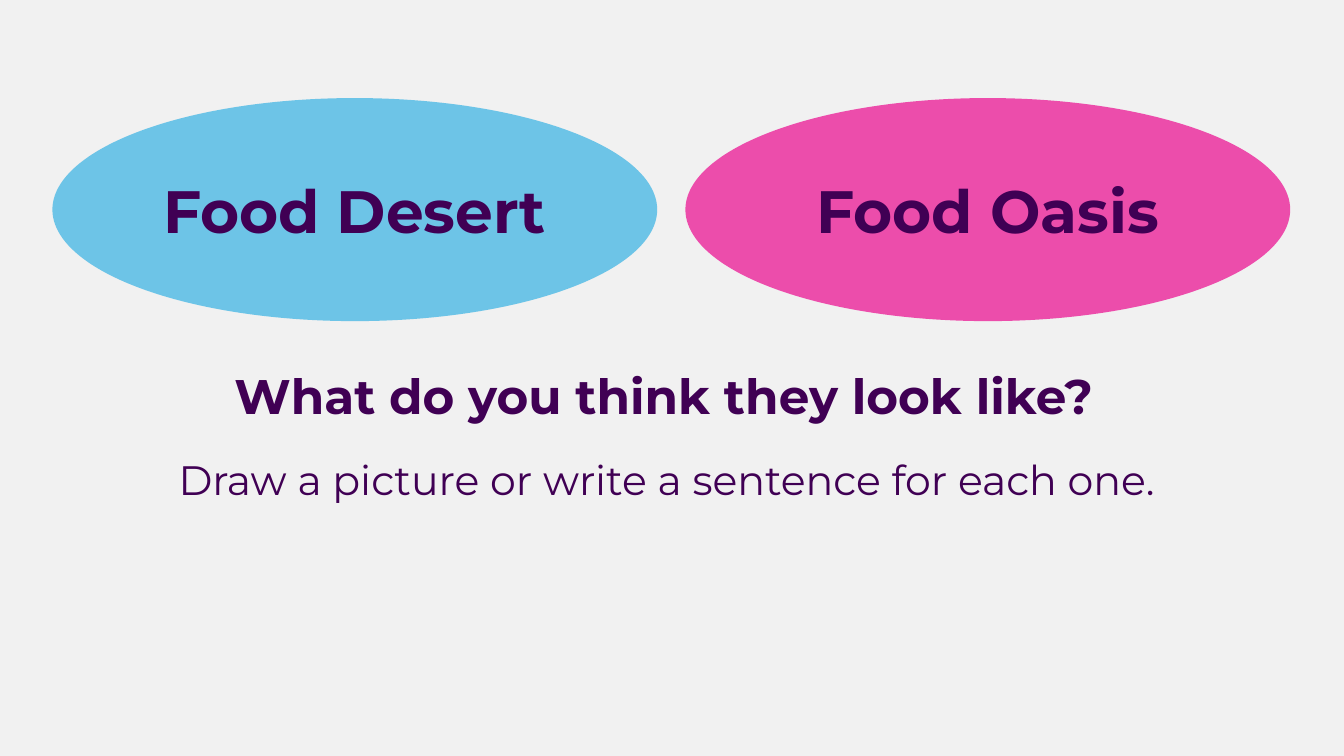
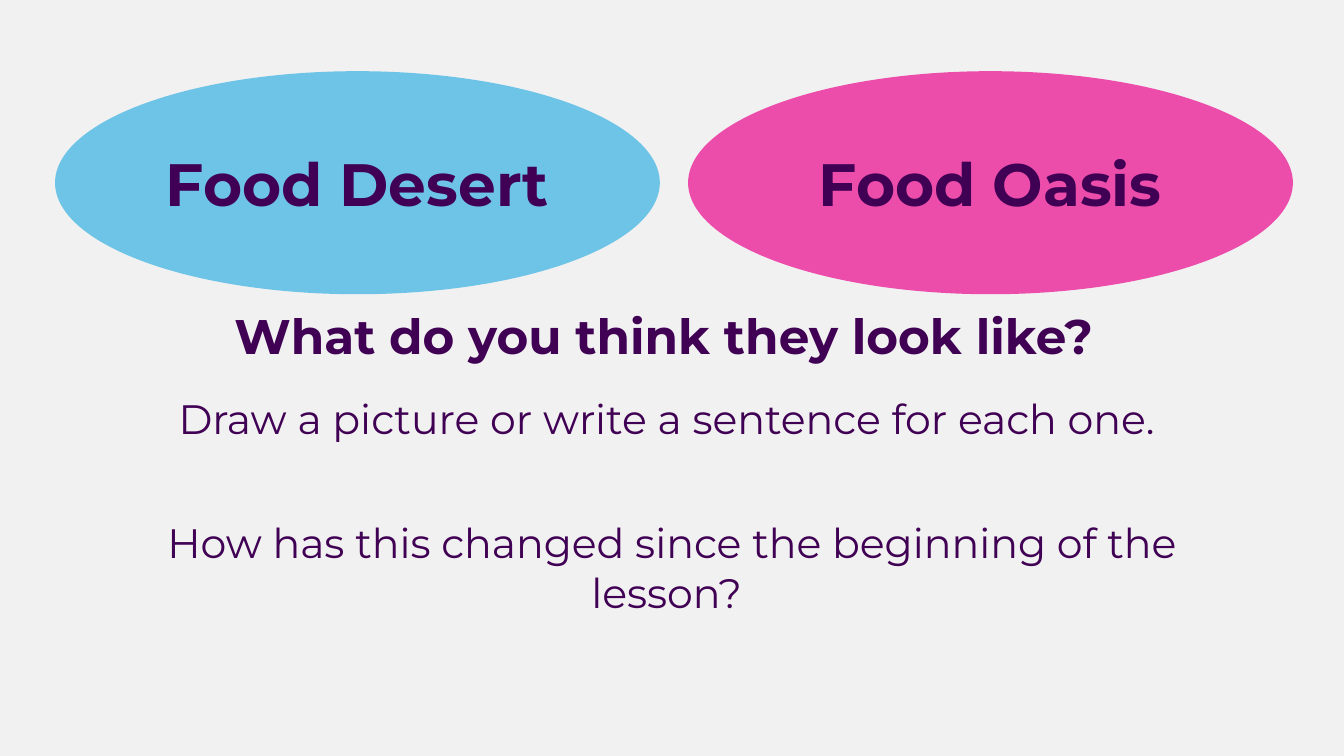
from dataclasses import dataclass

from lxml import etree
from pptx import Presentation
from pptx.dml.color import RGBColor
from pptx.enum import shapes, text
from pptx.oxml import ns
from pptx import util as u


@dataclass(frozen=True)
class Theme:
    """Colours, font and type sizes of the deck."""
    back: str = "F1F1F1"
    ink: str = "400054"
    blue: str = "2FAFE3"
    pink: str = "EB008B"
    alpha: int = 68
    font: str = "Montserrat"
    label: int = 32
    head: int = 26
    tail: int = 29
    body: int = 22
    plain: str = "{2D5ABB26-0587-4C30-8999-92F81FD0307C}"


class Deck:
    """Slides on a grid of 100 columns, with square cells."""

    def __init__(self, theme):
        """Start a wide deck."""
        self.theme = theme
        self.show = Presentation()
        self.show.slide_width = u.Inches(10)
        self.show.slide_height = u.Inches(10) * 9 // 16
        self.unit = self.show.slide_width // 100
        self.slide = None

    def grid(self, *cells):
        """Turn grid cells into lengths."""
        return [round(cell * self.unit) for cell in cells]

    def page(self):
        """Start a slide with the shared backdrop."""
        self.slide = self.show.slides.add_slide(self.show.slide_layouts[6])
        self.paint(self.slide.background.fill, self.theme.back)

    def paint(self, fill, tint):
        """Set a solid fill."""
        fill.solid()
        fill.fore_color.rgb = RGBColor.from_string(tint)

    def pad(self, item, anchor):
        """Set equal insets and the anchor of a cell or text frame."""
        style = {f"margin_{side}": self.unit
                 for side in ("left", "top", "right", "bottom")}
        style["vertical_anchor"] = anchor
        for key, value in style.items():
            setattr(item, key, value)

    def put(self, frame, runs):
        """Set one centred line of (words, size, bold) runs."""
        line = frame.paragraphs[0]
        line.alignment = text.PP_ALIGN.CENTER
        for words, size, bold in runs:
            run = line.add_run()
            run.text = words
            style = {"name": self.theme.font, "size": u.Pt(size), "bold": bold}
            for key, value in style.items():
                setattr(run.font, key, value)
            run.font.color.rgb = RGBColor.from_string(self.theme.ink)

    def oval(self, words, tint, left, top, wide=45, high=16.6):
        """Add a see-through labelled oval."""
        kind = shapes.MSO_SHAPE.FLOWCHART_CONNECTOR
        shape = self.slide.shapes.add_shape(kind, *self.grid(left, top, wide, high))
        shape.shadow.inherit = False
        shape.line.fill.background()
        self.paint(shape.fill, tint)
        color = next(shape._element.spPr.iter(ns.qn("a:srgbClr")))
        etree.SubElement(color, ns.qn("a:alpha"), val=str(self.theme.alpha * 1000))
        shape.text_frame.word_wrap = True
        self.pad(shape.text_frame, text.MSO_ANCHOR.MIDDLE)
        self.put(shape.text_frame, [(words, self.theme.label, True)])

    def table(self, rows, highs, left=10.4, top=3.5, wide=79.2):
        """Add a bare table whose rows of text span both columns."""
        box = self.grid(left, top, wide, sum(highs))
        shape = self.slide.shapes.add_table(len(rows), 2, *box)
        next(shape._element.iter(ns.qn("a:tableStyleId"))).text = self.theme.plain
        table = shape.table
        table.first_row = table.horz_banding = False
        for row, high in zip(table.rows, self.grid(*highs)):
            row.height = high
            for cell in row.cells:
                cell.fill.background()
        for index, runs in enumerate(rows):
            if not runs:
                continue
            cell = table.cell(index, 0)
            cell.merge(table.cell(index, 1))
            head = runs[0][1] == self.theme.head
            self.pad(cell, text.MSO_ANCHOR.BOTTOM if head else text.MSO_ANCHOR.TOP)
            self.put(cell.text_frame, runs)

    def task(self, left, top, drop, lines):
        """Build a slide with both ovals over the question and its prompts."""
        theme, row = self.theme, 9.2
        self.page()
        head = [("What do you think they look like?", theme.head, True),
                (" ", theme.tail, True)]
        body = [[(line, theme.body, False)] for line in lines]
        self.table([[], head, *body], [row, drop] + [row] * len(lines))
        pair = (("Food Desert", theme.blue), ("Food Oasis", theme.pink))
        for index, (words, tint) in enumerate(pair):
            self.oval(words, tint, left + index * 47.1, top)


def main():
    """Build and save both slides."""
    deck = Deck(Theme())
    draw = "Draw a picture or write a sentence for each one. "
    change = "How has this changed since the beginning of the lesson? "
    deck.task(3.9, 7.3, 20.2, [draw])
    deck.task(4.1, 5.3, 15.7, [draw, change])
    deck.show.save("out.pptx")


if __name__ == "__main__":
    main()
